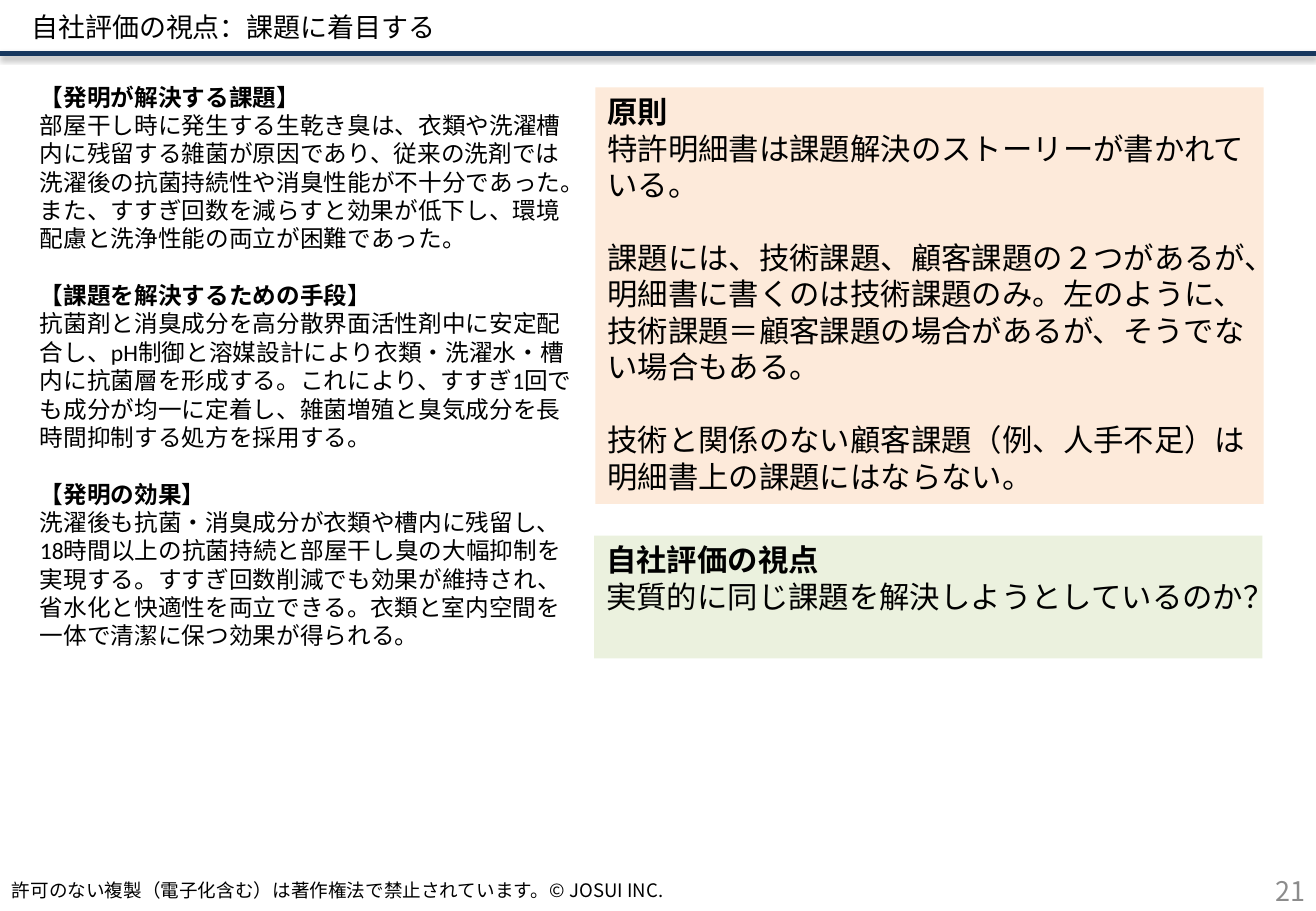
from dataclasses import dataclass

from lxml.etree import SubElement
from pptx import Presentation
from pptx.dml.color import RGBColor
from pptx.enum.shapes import MSO_CONNECTOR, MSO_SHAPE
from pptx.enum.text import MSO_ANCHOR, MSO_AUTO_SIZE, PP_ALIGN
from pptx.oxml.ns import qn
from pptx.slide import Slide
from pptx.text.text import TextFrame, _Paragraph
from pptx.util import Emu, Pt

PX = 9144  # EMU per px, 100 px to the inch


@dataclass(frozen=True)
class Theme:
    latin: str = "Calibri"
    japanese: str = "Noto Sans CJK JP"
    text: str = "000000"
    muted: str = "8C8C8C"
    rule: str = "17375E"
    principle: str = "FDEADA"
    viewpoint: str = "EBF1DE"
    title_size: int = 16
    card_size: int = 18
    patent_size: int = 14
    footer_size: int = 11
    leading: float = 1.2


@dataclass(frozen=True)
class Box:
    left: int
    top: int
    width: int
    height: int

    def emu(self) -> tuple[Emu, ...]:
        return tuple(Emu(v * PX) for v in (self.left, self.top, self.width, self.height))


@dataclass(frozen=True)
class Section:
    heading: str
    paragraphs: tuple[str, ...]


@dataclass(frozen=True)
class Card:
    box: Box
    fill: str
    section: Section


THEME = Theme()
SLIDE = Box(0, 0, 1083, 750)
TITLE = Box(16, 0, 959, 44)
PATENT = Box(23, 63, 466, 481)
FOOTER = Box(0, 715, 1070, 35)
NUMBER = Box(831, 716, 253, 35)

PATENT_SECTIONS = (
    Section("【発明が解決する課題】", (
        "部屋干し時に発生する生乾き臭は、衣類や洗濯槽内に残留する雑菌が原因であり、"
        "従来の洗剤では洗濯後の抗菌持続性や消臭性能が不十分であった。"
        "また、すすぎ回数を減らすと効果が低下し、環境配慮と洗浄性能の両立が困難であった。",)),
    Section("【課題を解決するための手段】", (
        "抗菌剤と消臭成分を高分散界面活性剤中に安定配合し、"
        "pH制御と溶媒設計により衣類・洗濯水・槽内に抗菌層を形成する。"
        "これにより、すすぎ1回でも成分が均一に定着し、"
        "雑菌増殖と臭気成分を長時間抑制する処方を採用する。",)),
    Section("【発明の効果】", (
        "洗濯後も抗菌・消臭成分が衣類や槽内に残留し、"
        "18時間以上の抗菌持続と部屋干し臭の大幅抑制を実現する。"
        "すすぎ回数削減でも効果が維持され、省水化と快適性を両立できる。"
        "衣類と室内空間を一体で清潔に保つ効果が得られる。",)),
)

CARDS = (
    Card(Box(490, 72, 550, 343), THEME.principle, Section("原則", (
        "特許明細書は課題解決のストーリーが書かれている。",
        "課題には、技術課題、顧客課題の２つがあるが、明細書に書くのは技術課題のみ。"
        "左のように、技術課題＝顧客課題の場合があるが、そうでない場合もある。",
        "技術と関係のない顧客課題（例、人手不足）は明細書上の課題にはならない。"))),
    Card(Box(489, 441, 550, 101), THEME.viewpoint, Section("自社評価の視点", (
        "実質的に同じ課題を解決しようとしているのか？",))),
)


def style(p: _Paragraph, size: int, latin: str, color: str = THEME.text,
          bold: bool = False) -> None:
    """Set the paragraph's font, with the Japanese face for East Asian text."""
    p.font.size = Pt(size)
    p.font.name = latin
    p.font.bold = bold
    p.font.color.rgb = RGBColor.from_string(color)
    SubElement(p._p.pPr.find(qn("a:defRPr")), qn("a:ea"), typeface=THEME.japanese)


def write_line(tf: TextFrame, text: str, size: int, color: str = THEME.text,
               align: PP_ALIGN = PP_ALIGN.LEFT) -> None:
    tf.word_wrap = True
    tf.auto_size = MSO_AUTO_SIZE.NONE
    tf.vertical_anchor = MSO_ANCHOR.MIDDLE
    p = tf.paragraphs[0]
    p.text = text
    p.alignment = align
    style(p, size, THEME.japanese, color)


def write_sections(tf: TextFrame, sections: tuple[Section, ...], size: int) -> None:
    """Write bold headings with their text, one line apart between blocks."""
    tf.word_wrap = True
    tf.vertical_anchor = MSO_ANCHOR.TOP
    leading = Pt(size * THEME.leading)
    p = tf.paragraphs[0]
    for i, section in enumerate(sections):
        for j, text in enumerate((section.heading, *section.paragraphs)):
            if i or j:
                p = tf.add_paragraph()
            p.text = text
            p.alignment = PP_ALIGN.LEFT
            p.line_spacing = leading
            if j > 1 or (i and j == 0):
                p.space_before = leading
            style(p, size, THEME.latin, bold=j == 0)


def add_rule(s: Slide) -> None:
    """Draw the line under the title with its soft shadow."""
    y = Emu(TITLE.height * PX)
    line = s.shapes.add_connector(MSO_CONNECTOR.STRAIGHT, 0, y, Emu(SLIDE.width * PX), y)
    line.line.color.rgb = RGBColor.from_string(THEME.rule)
    line.line.width = Pt(3)
    effects = SubElement(line._element.spPr, qn("a:effectLst"))
    shadow = SubElement(effects, qn("a:outerShdw"), blurRad=str(Pt(3.1)),
                        dist=str(Pt(1.8)), dir="5400000", rotWithShape="0")
    color = SubElement(shadow, qn("a:srgbClr"), val="000000")
    SubElement(color, qn("a:alpha"), val="35000")


def add_card(s: Slide, card: Card) -> None:
    sp = s.shapes.add_shape(MSO_SHAPE.RECTANGLE, *card.box.emu())
    sp.shadow.inherit = False
    sp.fill.solid()
    sp.fill.fore_color.rgb = RGBColor.from_string(card.fill)
    sp.line.fill.background()
    write_sections(sp.text_frame, (card.section,), THEME.card_size)


def main() -> None:
    prs = Presentation()
    prs.slide_width, prs.slide_height = SLIDE.emu()[2:]
    s = prs.slides.add_slide(prs.slide_layouts[5])
    add_rule(s)
    title = s.shapes.title
    title.left, title.top, title.width, title.height = TITLE.emu()
    write_line(title.text_frame, "自社評価の視点：課題に着目する", THEME.title_size)
    footer = s.shapes.add_textbox(*FOOTER.emu())
    write_line(footer.text_frame,
               "許可のない複製（電子化含む）は著作権法で禁止されています。© JOSUI INC.",
               THEME.footer_size)
    number = s.shapes.add_textbox(*NUMBER.emu())
    write_line(number.text_frame, "21", THEME.title_size, THEME.muted, PP_ALIGN.RIGHT)
    for card in CARDS:
        add_card(s, card)
    patent = s.shapes.add_textbox(*PATENT.emu())
    write_sections(patent.text_frame, PATENT_SECTIONS, THEME.patent_size)
    prs.save("out.pptx")


if __name__ == "__main__":
    main()
